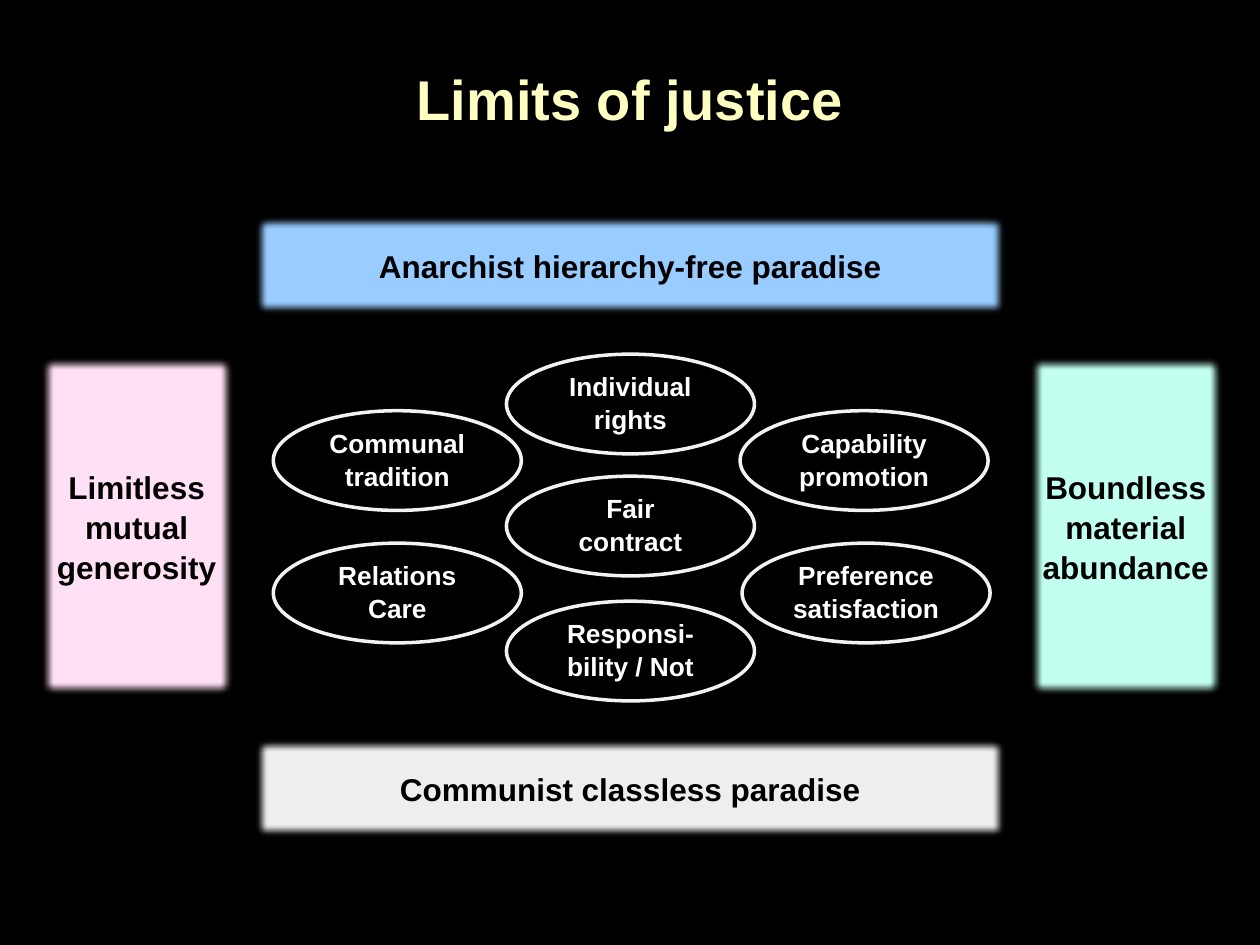
"""Build the slide "Limits of justice": seven theories inside four boundaries."""
import pptx
import pptx.util
import pptx.dml.color
import pptx.enum.shapes
import pptx.enum.text
import pptx.oxml
import pptx.oxml.ns

Cm = pptx.util.Cm
Pt = pptx.util.Pt
RGBColor = pptx.dml.color.RGBColor
Shape = pptx.enum.shapes.MSO_SHAPE
Anchor = pptx.enum.text.MSO_ANCHOR

BLACK = RGBColor(0x00, 0x00, 0x00)
WHITE = RGBColor(0xFF, 0xFF, 0xFF)
CREAM = RGBColor(0xFF, 0xFF, 0xC2)
PURPLE = RGBColor(0x70, 0x30, 0xA0)
MINT = RGBColor(0xC2, 0xFF, 0xF0)
PINK = RGBColor(0xFF, 0xE0, 0xF5)
BLUE = RGBColor(0x99, 0xCC, 0xFF)
GREY = RGBColor(0xEE, 0xEE, 0xEE)

DRAWING = pptx.oxml.ns.nsdecls("a")
TITLE = "Limits of justice"
LEFT, MIDDLE, RIGHT = 5.51, 10.21, 14.92
UPPER, LOWER = 8.28, 10.95
THEORY_SIZE = (5, 2.01)
THEORIES = [
    ("Responsi-bility / Not", MIDDLE, 12.12),
    ("Individual rights", MIDDLE, 7.14),
    ("Communal tradition", LEFT, UPPER),
    ("Preference satisfaction", RIGHT + 0.04, LOWER),
    ("Capability promotion", RIGHT, UPPER),
    ("Relations Care", LEFT, LOWER),
    ("Fair contract", MIDDLE, 9.6),
]
SIDE_SIZE = (3.99, 6.93)
BAR_SIZE = (15.19, 2.06)
BOUNDARIES = [
    ("Boundless material abundance", 20.7, 7.14, SIDE_SIZE, MINT),
    ("Limitless mutual generosity", 0.76, 7.14, SIDE_SIZE, PINK),
    ("Anarchist hierarchy-free paradise", 5.11, 4.32, BAR_SIZE, BLUE),
    ("Communist classless paradise", 5.11, 14.86, BAR_SIZE, GREY),
]


def write(shape, text, *, size, color, anchor=Anchor.MIDDLE, vertical_inset=0.13):
    """Put one centred bold paragraph into a shape."""
    frame = shape.text_frame
    frame.word_wrap = True
    frame.vertical_anchor = anchor
    frame.margin_top = frame.margin_bottom = Cm(vertical_inset)
    para = frame.paragraphs[0]
    para.alignment = pptx.enum.text.PP_ALIGN.CENTER
    para.line_spacing = 1.05
    span = para.add_run()
    span.text = text
    span.font.name = "Arial"
    span.font.size = Pt(size)
    span.font.bold = True
    span.font.color.rgb = color


def add_figure(page, kind, left, top, size, *, fill, line, weight):
    """Add a filled and outlined shape without shadow."""
    shape = page.shapes.add_shape(kind, Cm(left), Cm(top), *map(Cm, size))
    shape.shadow.inherit = False
    shape.fill.solid()
    shape.fill.fore_color.rgb = fill
    shape.line.color.rgb = line
    shape.line.width = Pt(weight)
    return shape


def add_theory(page, text, left, top):
    """Add an ellipse with a slightly transparent outline."""
    ellipse = add_figure(page, Shape.OVAL, left, top, THEORY_SIZE,
                         fill=BLACK, line=WHITE, weight=2)
    color = ellipse.line._ln.find(".//" + pptx.oxml.ns.qn("a:srgbClr"))
    color.append(pptx.oxml.parse_xml(f'<a:alpha {DRAWING} val="94000"/>'))
    write(ellipse, text, size=15, color=WHITE, anchor=Anchor.TOP, vertical_inset=0)


def add_boundary(page, text, left, top, size, fill):
    """Add a rectangle with soft edges."""
    box = add_figure(page, Shape.RECTANGLE, left, top, size,
                     fill=fill, line=PURPLE, weight=0.75)
    effects = box._element.spPr.find(pptx.oxml.ns.qn("a:effectLst"))
    effects.append(pptx.oxml.parse_xml(f'<a:softEdge {DRAWING} rad="{Pt(5)}"/>'))
    write(box, text, size=18, color=BLACK)


def main():
    """Create and save the deck."""
    deck = pptx.Presentation()
    deck.slide_width, deck.slide_height = Cm(25.4), Cm(19.05)
    page = deck.slides.add_slide(deck.slide_layouts[6])
    page.background.fill.solid()
    page.background.fill.fore_color.rgb = BLACK
    for theory in THEORIES:
        add_theory(page, *theory)
    title = page.shapes.add_textbox(Cm(0), Cm(0.36), Cm(25.4), Cm(3.18))
    write(title, TITLE, size=32, color=CREAM)
    for boundary in BOUNDARIES:
        add_boundary(page, *boundary)
    deck.save("out.pptx")


if __name__ == "__main__":
    main()
